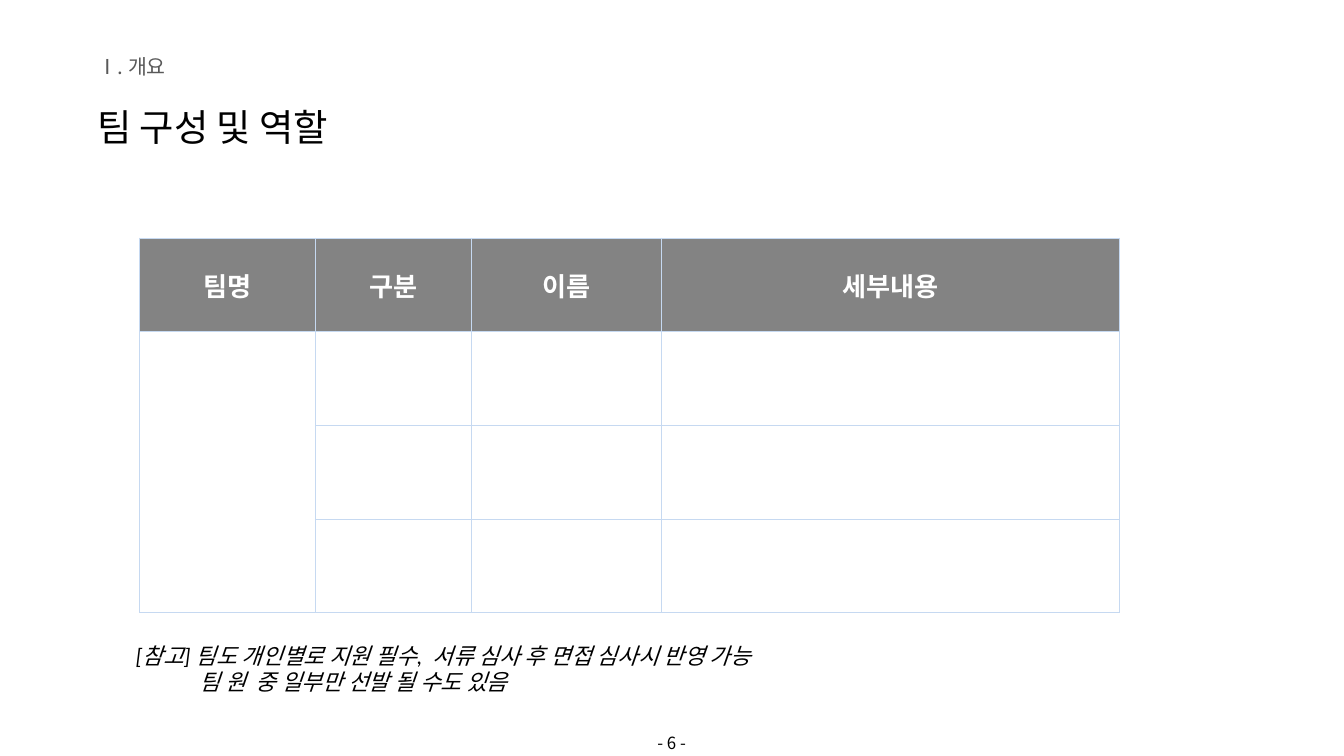
from lxml.etree import SubElement
from pptx import Presentation
from pptx.dml.color import RGBColor
from pptx.enum.text import MSO_ANCHOR, PP_ALIGN
from pptx.oxml.ns import qn
from pptx.util import Inches, Pt

BLACK = RGBColor(0x00, 0x00, 0x00)
WHITE = RGBColor(0xFF, 0xFF, 0xFF)
DARK = RGBColor(0x59, 0x59, 0x59)
GRAY = RGBColor(0x83, 0x83, 0x83)
BLUE = RGBColor(0xC6, 0xD9, 0xF1)
SANS = "Noto Sans CJK KR"


def style(para, size, color, face=SANS):
    font = para.font
    font.size = Pt(size)
    font.name = face
    font.color.rgb = color
    props = para._p.pPr.find(qn("a:defRPr"))
    SubElement(props, qn("a:ea"), typeface=SANS)
    return font


def add_text(left, top, width, height, lines, size, color, face=SANS):
    box = slide.shapes.add_textbox(
        Inches(left), Inches(top), Inches(width), Inches(height))
    frame = box.text_frame
    frame.word_wrap = True
    frame.text = "\n".join(lines)
    for para in frame.paragraphs:
        style(para, size, color, face)
    return frame


prs = Presentation()
prs.slide_width = Inches(20)
prs.slide_height = Inches(11.25)
slide = prs.slides.add_slide(prs.slide_layouts[6])

# Headings
add_text(1.35, 0.76, 5.73, 0.47, ["Ⅰ. 개요"], 22, DARK)
add_text(1.35, 1.5, 13.34, 0.77, ["팀 구성 및 역할"], 40, BLACK)

# Team table
heads = ["팀명", "구분", "이름", "세부내용"]
widths = [2.61, 2.32, 2.83, 6.82]
table = slide.shapes.add_table(
    4, 4, Inches(2.08), Inches(3.54), Inches(14.58), Inches(5.58)).table
for col, width in zip(table.columns, widths):
    col.width = Inches(width)

for cell in table.iter_cells():
    props = cell._tc.get_or_add_tcPr()
    for side in ("lnL", "lnR", "lnT", "lnB"):
        line = SubElement(props, qn(f"a:{side}"), w=str(Pt(1)))
        fill = SubElement(line, qn("a:solidFill"))
        SubElement(fill, qn("a:srgbClr"), val=str(BLUE))
    cell.fill.solid()
    cell.fill.fore_color.rgb = WHITE

for col, head in enumerate(heads):
    cell = table.cell(0, col)
    cell.fill.fore_color.rgb = GRAY
    cell.text = head
    cell.vertical_anchor = MSO_ANCHOR.MIDDLE
    para = cell.text_frame.paragraphs[0]
    para.alignment = PP_ALIGN.CENTER
    style(para, 28, WHITE, "Calibri").bold = True
table.cell(1, 0).merge(table.cell(3, 0))

# Note below the table, its second line indented
note = add_text(1.92, 9.5, 17.25, 0.91, [
    "[참고] 팀도 개인별로 지원 필수,  서류 심사 후 면접 심사시 반영 가능",
    "팀 원  중 일부만 선발 될 수도 있음",
], 24, BLACK, "Calibri")
for para in note.paragraphs:
    para.font.italic = True
note.paragraphs[1]._p.pPr.set("marL", str(Inches(0.95)))

# Page number
page = add_text(8.83, 10.86, 2.33, 0.4, ["- 6 -"], 18, BLACK)
page.vertical_anchor = MSO_ANCHOR.MIDDLE
page.paragraphs[0].alignment = PP_ALIGN.CENTER

prs.save("out.pptx")
